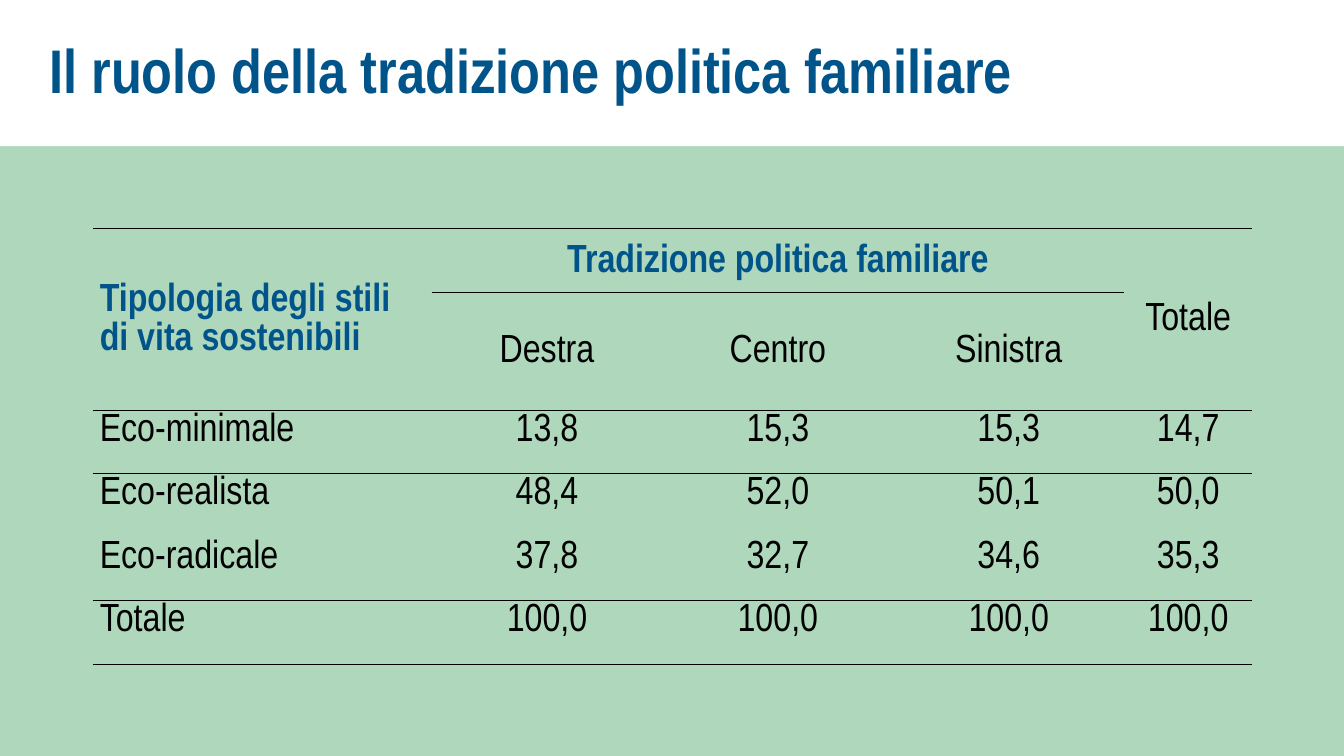
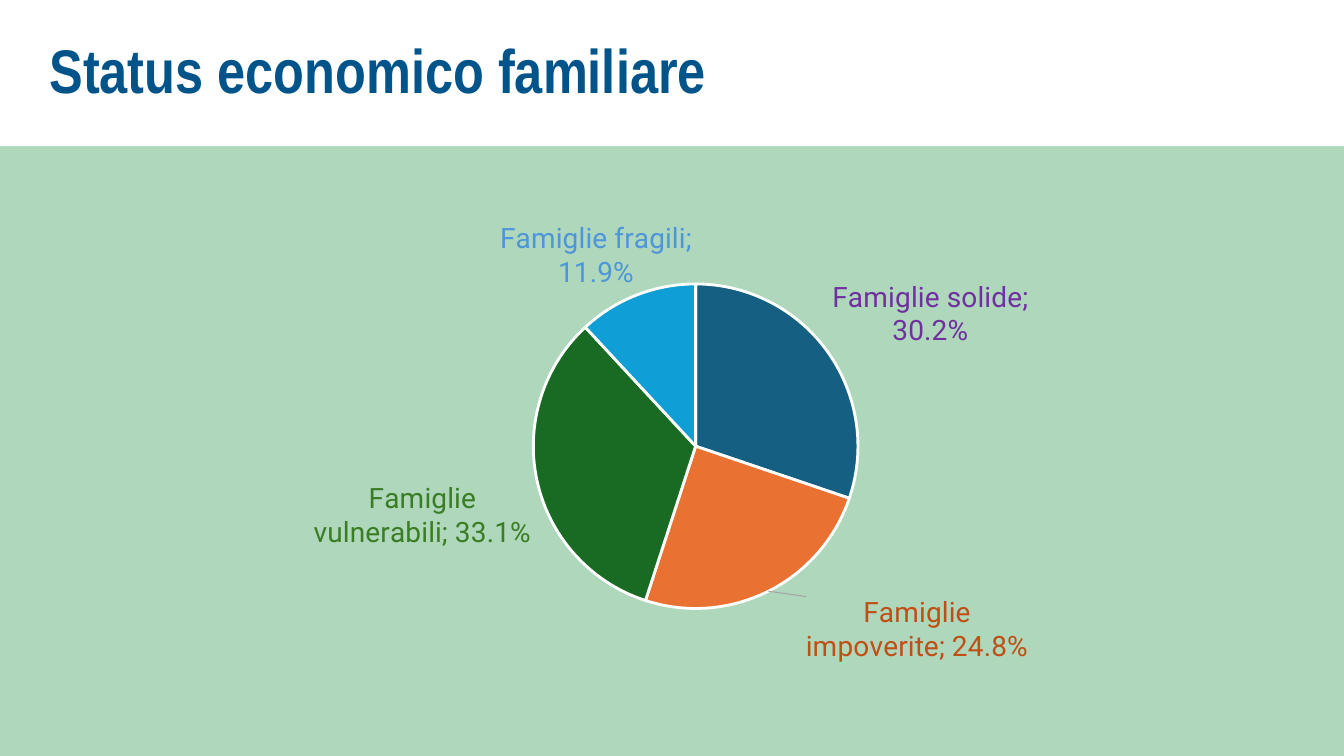
"""Build two slides on family political tradition and economic status."""
from dataclasses import dataclass

from lxml.etree import _Element as Element
from pptx import Presentation
from pptx.chart.data import CategoryChartData
from pptx.dml.color import RGBColor as RGB
from pptx.enum.chart import XL_CHART_TYPE as ChartType, XL_LABEL_POSITION as LabelPos
from pptx.enum.shapes import MSO_SHAPE as Shape
from pptx.enum.text import MSO_ANCHOR as Anchor, PP_ALIGN as Align
from pptx.oxml import parse_xml
from pptx.oxml.ns import nsdecls
from pptx.presentation import Presentation as Deck
from pptx.slide import Slide
from pptx.table import Table, _Cell as Cell
from pptx.util import Inches, Pt


@dataclass(frozen=True)
class Theme:
    green: str = "AED7BC"
    white: str = "FFFFFF"
    blue: str = "005489"
    black: str = "000000"
    leader: str = "A6A6A6"
    narrow: str = "Arial Narrow"
    roboto: str = "Roboto"
    title_pt: int = 44
    table_pt: int = 28
    label_pt: int = 20


@dataclass(frozen=True)
class Slice:
    name: str
    share: float
    fill: str
    text: str
    shift: float = 0


@dataclass(frozen=True)
class Header:
    row: int
    col: int
    last_row: int
    last_col: int
    text: str
    strong: bool = False


T = Theme()
NO_GRID = "{2D5ABB26-0587-4C30-8999-92F81FD0307C}"
COLS = (3.36, 2.29, 2.29, 2.29, 1.27)
ROWS = (0.63, 1.17, 0.63, 0.63, 0.63, 0.63)
HEADERS = (
    Header(0, 0, 1, 0, "Tipologia degli stili\ndi vita sostenibili", True),
    Header(0, 1, 0, 3, "Tradizione politica familiare", True),
    Header(0, 4, 1, 4, "Totale"),
    Header(1, 1, 1, 1, "Destra"),
    Header(1, 2, 1, 2, "Centro"),
    Header(1, 3, 1, 3, "Sinistra"),
)
BODY = (
    ("Eco-minimale", "13,8", "15,3", "15,3", "14,7"),
    ("Eco-realista", "48,4", "52,0", "50,1", "50,0"),
    ("Eco-radicale", "37,8", "32,7", "34,6", "35,3"),
    ("Totale", "100,0", "100,0", "100,0", "100,0"),
)
RULED_ABOVE = {0: range(5), 1: range(1, 4), 2: range(5), 5: range(5)}
SLICES = (
    Slice("Famiglie solide", 0.302, "156082", "7030A0"),
    Slice("Famiglie impoverite", 0.248, "E97132", "C04F15", 0.03),
    Slice("Famiglie vulnerabili", 0.331, "196B24", "3A7D22"),
    Slice("Famiglie fragili", 0.119, "0F9ED5", "4E95D9", 0.05),
)


def rgb(code: str) -> RGB:
    return RGB.from_string(code)


def chart_xml(tag: str, inner: str) -> Element:
    return parse_xml(f"<c:{tag} {nsdecls('c', 'a')}>{inner}</c:{tag}>")


def layout_xml(**values: float | str) -> Element:
    inner = "".join(f'<c:{k} val="{v}"/>' for k, v in values.items())
    return chart_xml("layout", f"<c:manualLayout>{inner}</c:manualLayout>")


def add_slide(prs: Deck, title: str) -> Slide:
    s = prs.slides.add_slide(prs.slide_layouts[6])
    s.background.fill.solid()
    s.background.fill.fore_color.rgb = rgb(T.green)
    sp = s.shapes.add_shape(Shape.RECTANGLE, 0, 0, prs.slide_width, Inches(1.45))
    sp.shadow.inherit = False
    sp.fill.solid()
    sp.fill.fore_color.rgb = rgb(T.white)
    sp.line.fill.background()
    tf = sp.text_frame
    tf.word_wrap = True
    tf.margin_left = Inches(0.49)
    tf.vertical_anchor = Anchor.MIDDLE
    tf.text = title
    p = tf.paragraphs[0]
    p.alignment = Align.LEFT
    p.line_spacing = 0.9
    style_font(p.runs[0].font, T.narrow, T.title_pt, T.blue, True)
    return s


def style_font(font, name: str, size: int, color: str, bold: bool = False) -> None:
    font.name, font.size, font.bold = name, Pt(size), bold
    font.color.rgb = rgb(color)


def fill_cell(cell: Cell, text: str, centred: bool, strong: bool = False) -> None:
    cell.margin_left = cell.margin_right = Inches(0.07)
    cell.margin_top = cell.margin_bottom = 0
    tf = cell.text_frame
    tf.text = text
    for p in tf.paragraphs:
        p.alignment = Align.CENTER if centred else Align.LEFT
        p.line_spacing = 1.07
        style_font(p.runs[0].font, T.narrow, T.table_pt, T.blue if strong else T.black, strong)
    tf.paragraphs[-1].space_after = Pt(8)


def rule_cell(cell: Cell, sides: str) -> None:
    for i, side in enumerate(sides):
        line = parse_xml(
            f'<a:ln{side} {nsdecls("a")} w="12700"><a:solidFill>'
            f'<a:srgbClr val="{T.black}"/></a:solidFill></a:ln{side}>'
        )
        cell._tc.get_or_add_tcPr().insert(i, line)


def rule_table(tbl: Table) -> None:
    last = len(ROWS) - 1
    for r in range(len(ROWS)):
        for c in range(len(COLS)):
            cell = tbl.cell(r, c)
            cell.fill.background()
            sides = ("T" if c in RULED_ABOVE.get(r, ()) else "") + ("B" if r == last else "")
            rule_cell(cell, sides)


def add_lifestyle_table(s: Slide) -> None:
    frame = s.shapes.add_table(
        len(ROWS), len(COLS), Inches(0.92), Inches(2.27), Inches(sum(COLS)), Inches(sum(ROWS))
    )
    tbl = frame.table
    tbl.first_row = tbl.horz_banding = False
    tbl._tbl.tblPr.find("{*}tableStyleId").text = NO_GRID
    for col, width in zip(tbl.columns, COLS):
        col.width = Inches(width)
    for row, height in zip(tbl.rows, ROWS):
        row.height = Inches(height)
    for h in HEADERS:
        cell = tbl.cell(h.row, h.col)
        if (h.row, h.col) != (h.last_row, h.last_col):
            cell.merge(tbl.cell(h.last_row, h.last_col))
        fill_cell(cell, h.text, h.col > 0, h.strong)
        cell.vertical_anchor = Anchor.MIDDLE
    for r, values in enumerate(BODY, start=2):
        for c, value in enumerate(values):
            fill_cell(tbl.cell(r, c), value, c > 0)
    rule_table(tbl)


def style_label(dlbl: Element, shift: float) -> None:
    dlbl.find("{*}showCatName").set("val", "1")
    dlbl.find("{*}showVal").set("val", "1")
    dlbl.find("{*}showPercent").set("val", "0")
    dlbl.append(chart_xml("separator", "; "))
    number = parse_xml(f'<c:numFmt {nsdecls("c")} formatCode="0.0%" sourceLinked="0"/>')
    dlbl.find("{*}txPr").addprevious(number)
    for spare in dlbl.findall("{*}spPr"):
        dlbl.remove(spare)
    if shift:
        dlbl.find("{*}idx").addnext(layout_xml(x=shift, y=0))


def add_status_pie(s: Slide) -> None:
    data = CategoryChartData(number_format="0.0%")
    data.categories = [sl.name for sl in SLICES]
    data.add_series("Series 1", [sl.share for sl in SLICES])
    frame = s.shapes.add_chart(
        ChartType.PIE, Inches(0.92), Inches(2), Inches(11.5), Inches(4.76), data
    )
    chart = frame.chart
    chart.has_legend = chart.has_title = False
    style_font(chart.font, T.roboto, T.label_pt, T.black)
    plot = chart.plots[0]
    plot.vary_by_categories = True
    series = plot.series[0]
    for i, sl in enumerate(SLICES):
        point = series.points[i]
        point.format.fill.solid()
        point.format.fill.fore_color.rgb = rgb(sl.fill)
        point.format.line.color.rgb = rgb(T.white)
        point.format.line.width = Pt(2)
        label = point.data_label
        style_font(label.font, T.roboto, T.label_pt, sl.text)
        label.position = LabelPos.OUTSIDE_END
    labels = series._element.find("{*}dLbls")
    for dlbl, sl in zip(labels.findall("{*}dLbl"), SLICES):
        style_label(dlbl, sl.shift)
    leader = chart_xml(
        "leaderLines",
        f'<c:spPr><a:ln w="9525"><a:solidFill><a:srgbClr val="{T.leader}"/>'
        "</a:solidFill></a:ln></c:spPr>",
    )
    labels.find("{*}showLeaderLines").addnext(leader)
    area = chart._chartSpace.chart.plotArea
    for old in area.findall("{*}layout"):
        area.remove(old)
    area.insert(0, layout_xml(
        layoutTarget="inner", xMode="edge", yMode="edge", x=0.38, y=0.17, w=0.28, h=0.68
    ))


def main() -> None:
    prs = Presentation()
    prs.slide_width, prs.slide_height = Inches(13.33), Inches(7.5)
    add_lifestyle_table(add_slide(prs, "Il ruolo della tradizione politica familiare"))
    add_status_pie(add_slide(prs, "Status economico familiare"))
    prs.save("out.pptx")


if __name__ == "__main__":
    main()
